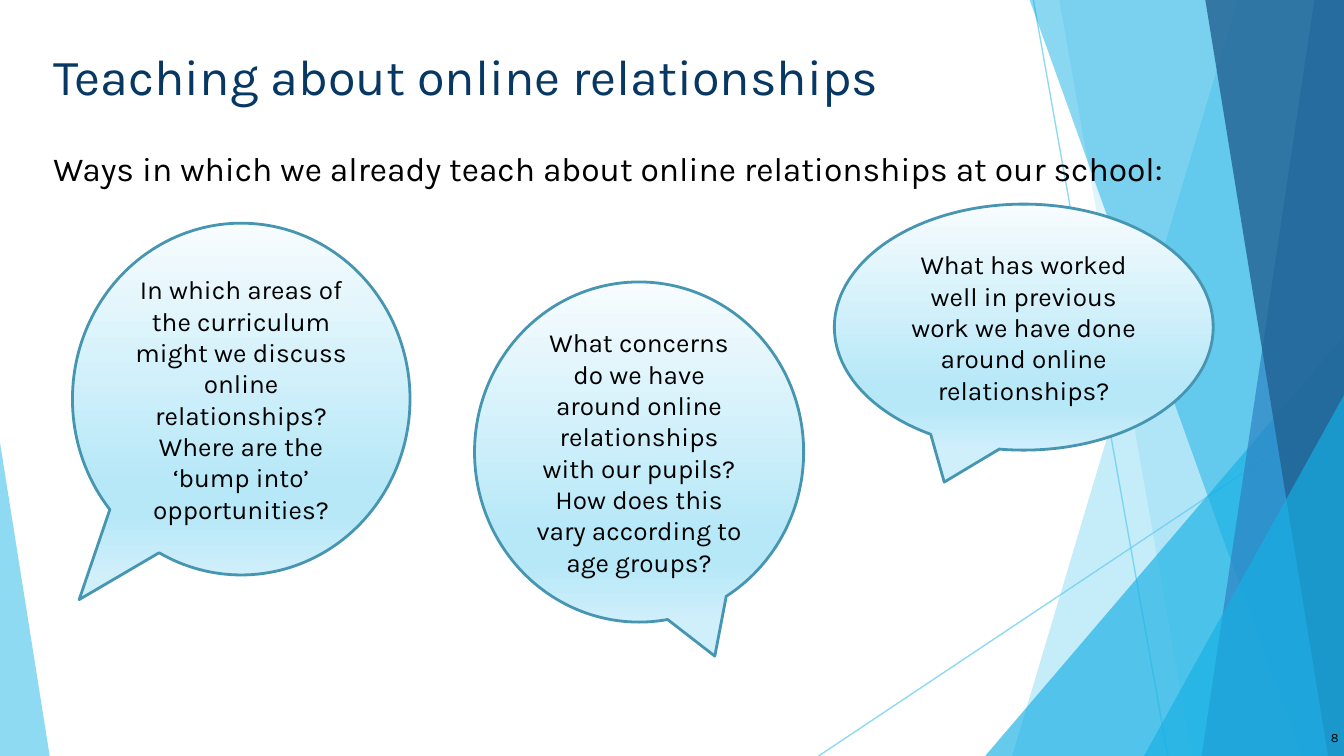
"""Build a slide with three speech bubbles beside a band of blue facets."""
from dataclasses import dataclass

import lxml.etree
import pptx
import pptx.dml.color
import pptx.enum.shapes
import pptx.enum.text
import pptx.oxml
import pptx.oxml.ns
import pptx.util

Cm = pptx.util.Cm
Pt = pptx.util.Pt
Kind = pptx.enum.shapes.MSO_SHAPE
Align = pptx.enum.text.PP_ALIGN
Anchor = pptx.enum.text.MSO_ANCHOR
qn = pptx.oxml.ns.qn

WIDTH, HEIGHT = 25.4, 14.29
FONT = "Karla"
COLORS = {
    "sky": "5FCBEF",
    "cyan": "17B0E4",
    "blue": "2E83C3",
    "navy": "226292",
    "title": "073763",
    "text": "000000",
    "edge": "4696B1",
    "pale": "F7FCFE",
    "mid": "B7E8F8",
    "low": "CFEFFA",
}
STOPS = ((0, "pale"), (74, "mid"), (83, "mid"), (100, "low"))


@dataclass
class Ray:
    """A thin line between two points."""
    start: tuple[float, float]
    end: tuple[float, float]


@dataclass
class Band:
    """A facet from a slanted left side to the right slide edge."""
    top: float
    foot: float
    color: str
    alpha: int


@dataclass
class Wedge:
    """A right triangle standing on the bottom slide edge."""
    left: float
    top: float
    width: float
    lean: float
    color: str
    alpha: int


@dataclass
class Label:
    """A text box with one paragraph."""
    box: tuple[float, float, float, float]
    text: str
    size: float
    color: str = "text"
    align: Align = Align.LEFT
    anchor: Anchor = Anchor.TOP


@dataclass
class Bubble:
    """A round callout with its tail position."""
    box: tuple[float, float, float, float]
    tail: tuple[float, float]
    text: str


RAYS = (
    Ray((19.53, 0), (22.07, HEIGHT)),
    Ray((WIDTH, 7.67), (15.47, HEIGHT)),
)
FACETS = (
    Band(23.39, 19.13, "sky", 36),
    Band(20.02, 22.53, "sky", 20),
    Wedge(18.62, 6.35, 6.78, 1, "cyan", 66),
    Band(19.46, 24.59, "cyan", 50),
    Band(24.84, 22.71, "blue", 70),
    Band(22.78, 25.1, "navy", 80),
    Wedge(21.62, 7.47, 3.78, 1, "cyan", 66),
    Wedge(0, 8.36, 0.94, 0, "sky", 70),
)
LABELS = (
    Label((0.76, 0.61, 24.31, 1.6), "Teaching about online relationships", 27, "title"),
    Label((0.76, 2.54, 22.2, 10.46),
          "Ways in which we already teach about online relationships at our school:", 18),
    Label((24.03, 13.39, 1.52, 1.09), "8", 6.8, "text", Align.RIGHT, Anchor.MIDDLE),
)
BUBBLES = (
    Bubble((1.37, 4.22, 6.38, 6.65), (-0.48, 0.57),
           "In which areas of the curriculum might we discuss online relationships? "
           "Where are the ‘bump into’ opportunities?"),
    Bubble((15.77, 3.86, 7.16, 4.65), (-0.21, 0.63),
           "What has worked well in previous work we have done around online relationships?"),
    Bubble((8.97, 5.33, 6.22, 6.43), (0.23, 0.6),
           "What concerns do we have around online relationships with our pupils? "
           "How does this vary according to age groups?"),
)


def rgb(name: str) -> pptx.dml.color.RGBColor:
    """Look up a named colour."""
    return pptx.dml.color.RGBColor.from_string(COLORS[name])


def fade(node, alpha: int) -> None:
    """Set the opacity percentage of the first colour in a node."""
    tone = next(node.iter(qn("a:srgbClr")))
    lxml.etree.SubElement(tone, qn("a:alpha"), val=str(alpha * 1000))


def write(frame, text: str, size: float, color: str, align: Align, anchor: Anchor) -> None:
    """Fill a text frame with one formatted paragraph."""
    frame.word_wrap = True
    frame.vertical_anchor = anchor
    frame.text = text
    para = frame.paragraphs[0]
    para.alignment = align
    font = para.runs[0].font
    font.name, font.size = FONT, Pt(size)
    font.color.rgb = rgb(color)


def draw_ray(shapes, ray: Ray) -> None:
    """Draw a faint straight line."""
    ends = [Cm(n) for n in (*ray.start, *ray.end)]
    line = shapes.add_connector(pptx.enum.shapes.MSO_CONNECTOR.STRAIGHT, *ends)
    line.line.color.rgb = rgb("sky")
    line.line.width = Pt(0.75)
    props = line._element.spPr
    fade(props, 70)
    lxml.etree.SubElement(props, qn("a:effectLst"))


def draw_facet(shapes, facet: Band | Wedge) -> None:
    """Draw a translucent facet without an outline."""
    if isinstance(facet, Band):
        points = [(Cm(x), Cm(y)) for x, y in
                  ((facet.top, 0), (WIDTH, 0), (WIDTH, HEIGHT), (facet.foot, HEIGHT))]
        pen = shapes.build_freeform(*points[0])
        pen.add_line_segments(points[1:], close=True)
        shape = pen.convert_to_shape()
    else:
        shape = shapes.add_shape(Kind.ISOSCELES_TRIANGLE, Cm(facet.left), Cm(facet.top),
                                 Cm(facet.width), Cm(HEIGHT - facet.top))
        shape.adjustments[0] = facet.lean
    shape.shadow.inherit = False
    shape.fill.solid()
    shape.fill.fore_color.rgb = rgb(facet.color)
    fade(shape._element.spPr, facet.alpha)
    shape.line.fill.background()


def draw_label(shapes, label: Label) -> None:
    """Draw a text box with even margins."""
    frame = shapes.add_textbox(*map(Cm, label.box)).text_frame
    frame.margin_left = frame.margin_right = Cm(0.25)
    frame.margin_top = frame.margin_bottom = Cm(0.25)
    write(frame, label.text, label.size, label.color, label.align, label.anchor)


def draw_bubble(shapes, bubble: Bubble) -> None:
    """Draw a callout with a vertical gradient."""
    shape = shapes.add_shape(Kind.OVAL_CALLOUT, *map(Cm, bubble.box))
    shape.adjustments[0], shape.adjustments[1] = bubble.tail
    shape.shadow.inherit = False
    shape.fill.gradient()
    grad = shape._element.spPr.find(qn("a:gradFill"))
    stops = grad.find(qn("a:gsLst"))
    for old in list(stops):
        stops.remove(old)
    for place, name in STOPS:
        stop = lxml.etree.SubElement(stops, qn("a:gs"), pos=str(place * 1000))
        lxml.etree.SubElement(stop, qn("a:srgbClr"), val=COLORS[name])
    shape.fill.gradient_angle = 270
    shape.line.color.rgb = rgb("edge")
    shape.line.width = Pt(1.5)
    write(shape.text_frame, bubble.text, 14, "text", Align.CENTER, Anchor.MIDDLE)


def main() -> None:
    """Build and save the slide."""
    deck = pptx.Presentation()
    deck.slide_width, deck.slide_height = Cm(WIDTH), Cm(HEIGHT)
    shapes = deck.slides.add_slide(deck.slide_layouts[6]).shapes
    for items, draw in ((RAYS, draw_ray), (FACETS, draw_facet),
                        (LABELS, draw_label), (BUBBLES, draw_bubble)):
        for item in items:
            draw(shapes, item)
    deck.save("out.pptx")


if __name__ == "__main__":
    main()
